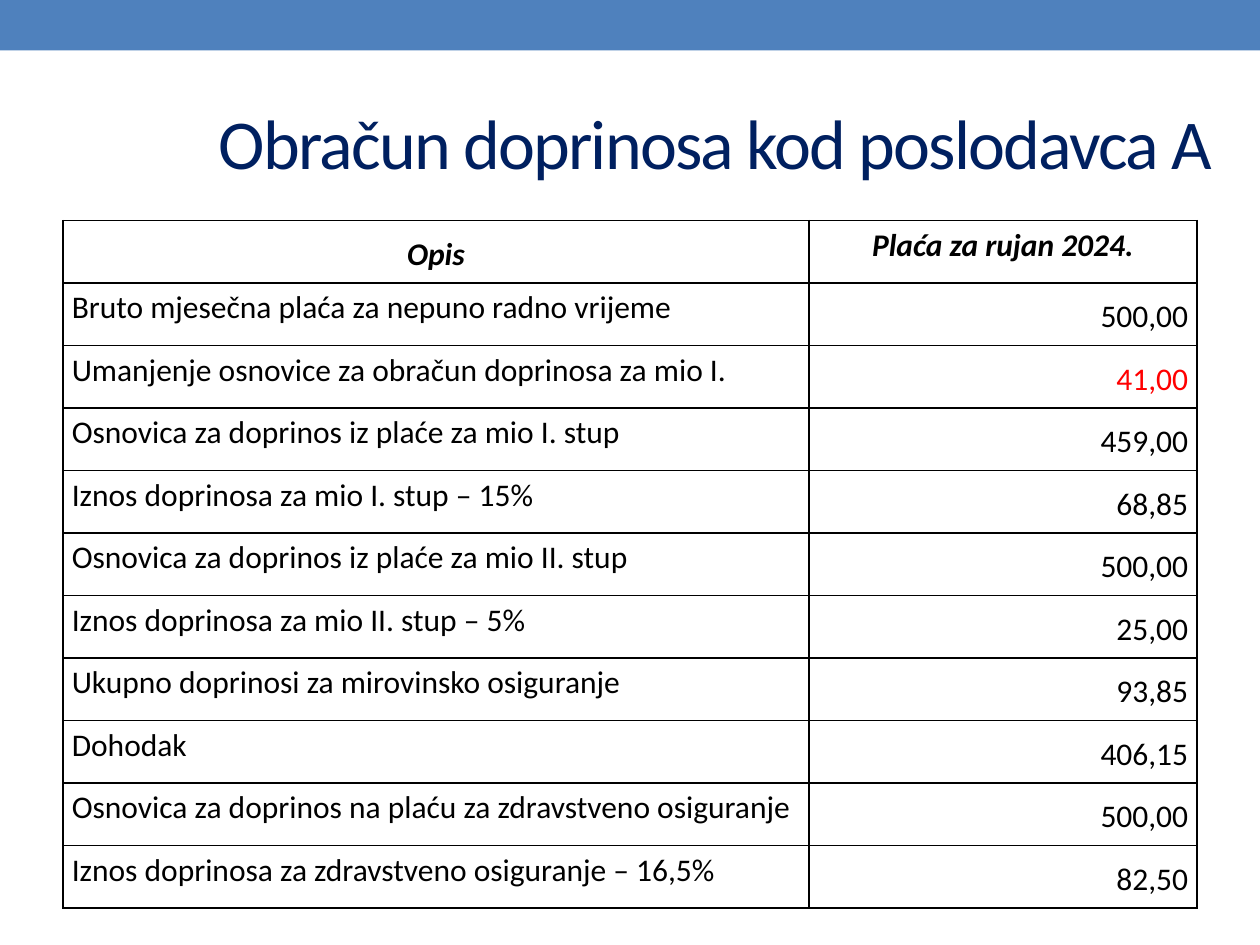
from dataclasses import dataclass

from lxml import etree
from pptx import Presentation
from pptx.dml.color import RGBColor
from pptx.enum.shapes import MSO_SHAPE
from pptx.enum.text import MSO_ANCHOR, PP_ALIGN
from pptx.oxml.ns import qn
from pptx.util import Inches, Pt

RECTANGLE = MSO_SHAPE.RECTANGLE
TOP, MIDDLE = MSO_ANCHOR.TOP, MSO_ANCHOR.MIDDLE
CENTER, RIGHT, JUSTIFY = PP_ALIGN.CENTER, PP_ALIGN.RIGHT, PP_ALIGN.JUSTIFY
TITLE_ONLY = 5

HEADERS = ("Opis", "Plaća za rujan 2024.")
CONTRIBUTIONS = (
    ("Bruto mjesečna plaća za nepuno radno vrijeme", "500,00"),
    ("Umanjenje osnovice za obračun doprinosa za mio I.", "41,00"),
    ("Osnovica za doprinos iz plaće za mio I. stup", "459,00"),
    ("Iznos doprinosa za mio I. stup – 15%", "68,85"),
    ("Osnovica za doprinos iz plaće za mio II. stup", "500,00"),
    ("Iznos doprinosa za mio II. stup – 5%", "25,00"),
    ("Ukupno doprinosi za mirovinsko osiguranje", "93,85"),
    ("Dohodak", "406,15"),
    ("Osnovica za doprinos na plaću za zdravstveno osiguranje", "500,00"),
    ("Iznos doprinosa za zdravstveno osiguranje – 16,5%", "82,50"),
)
REDUCTION_ROW = 2


@dataclass(frozen=True)
class Theme:
    font: str = "Calibri"
    band: str = "4F81BD"
    title: str = "002060"
    text: str = "000000"
    highlight: str = "FF0000"
    border: str = "000000"
    title_size: int = 40
    table_size: int = 18


class SlideBuilder:
    """Places elements on one slide; boxes are in inches on a 10 by 7.5 grid."""

    def __init__(self, presentation, theme):
        self.theme = theme
        self.slide = presentation.slides.add_slide(presentation.slide_layouts[TITLE_ONLY])

    def format_font(self, font, size, color, emphasis=False):
        font.name = self.theme.font
        font.size = Pt(size)
        font.bold = font.italic = emphasis
        font.color.rgb = RGBColor.from_string(color)

    def band(self, *box):
        shape = self.slide.shapes.add_shape(RECTANGLE, *map(Inches, box))
        shape.shadow.inherit = False
        shape.fill.solid()
        shape.fill.fore_color.rgb = RGBColor.from_string(self.theme.band)
        shape.line.fill.background()

    def title(self, text, *box):
        shape = self.slide.shapes.title
        shape.left, shape.top, shape.width, shape.height = map(Inches, box)
        frame = shape.text_frame
        frame.text = text
        frame.word_wrap = True
        frame.vertical_anchor = MIDDLE
        paragraph = frame.paragraphs[0]
        paragraph.alignment = RIGHT
        run = paragraph.runs[0]
        self.format_font(run.font, self.theme.title_size, self.theme.title)
        run.font._element.set("spc", "-100")

    def table(self, rows, column_widths, left, top, height):
        frame = self.slide.shapes.add_table(
            len(rows), len(column_widths), Inches(left), Inches(top),
            Inches(sum(column_widths)), Inches(height))
        table = frame.table
        for column, width in zip(table.columns, column_widths):
            column.width = Inches(width)
        for row_index, row in enumerate(rows):
            for column_index, text in enumerate(row):
                self.cell(table.cell(row_index, column_index), text, row_index, column_index)

    def cell(self, cell, text, row, column):
        is_header, is_amount = row == 0, column == 1
        cell.margin_left = cell.margin_right = Inches(0.07)
        cell.margin_top = cell.margin_bottom = 0
        cell.vertical_anchor = MIDDLE if is_header != is_amount else TOP
        cell.fill.background()
        self.borders(cell)
        cell.text_frame.text = text
        paragraph = cell.text_frame.paragraphs[0]
        paragraph.alignment = CENTER if is_header else RIGHT if is_amount else JUSTIFY
        paragraph.line_spacing = 1.15
        paragraph.space_after = Pt(8)
        highlighted = is_amount and row == REDUCTION_ROW
        color = self.theme.highlight if highlighted else self.theme.text
        self.format_font(paragraph.runs[0].font, self.theme.table_size, color, is_header)

    def borders(self, cell):
        properties = cell._tc.get_or_add_tcPr()
        for index, side in enumerate(("a:lnL", "a:lnR", "a:lnT", "a:lnB")):
            line = etree.Element(qn(side), w=str(Pt(1)))
            fill = etree.SubElement(line, qn("a:solidFill"))
            etree.SubElement(fill, qn("a:srgbClr"), val=self.theme.border)
            properties.insert(index, line)


def main():
    presentation = Presentation()
    presentation.slide_width, presentation.slide_height = Inches(10), Inches(7.5)
    builder = SlideBuilder(presentation, Theme())
    builder.band(0, 0, 10, 0.4)
    builder.title("Obračun doprinosa kod poslodavca A", 0.5, 0.58, 9.22, 1.08)
    builder.table((HEADERS, *CONTRIBUTIONS), (5.92, 3.08), left=0.5, top=1.75, height=5.46)
    presentation.save("out.pptx")


if __name__ == "__main__":
    main()
